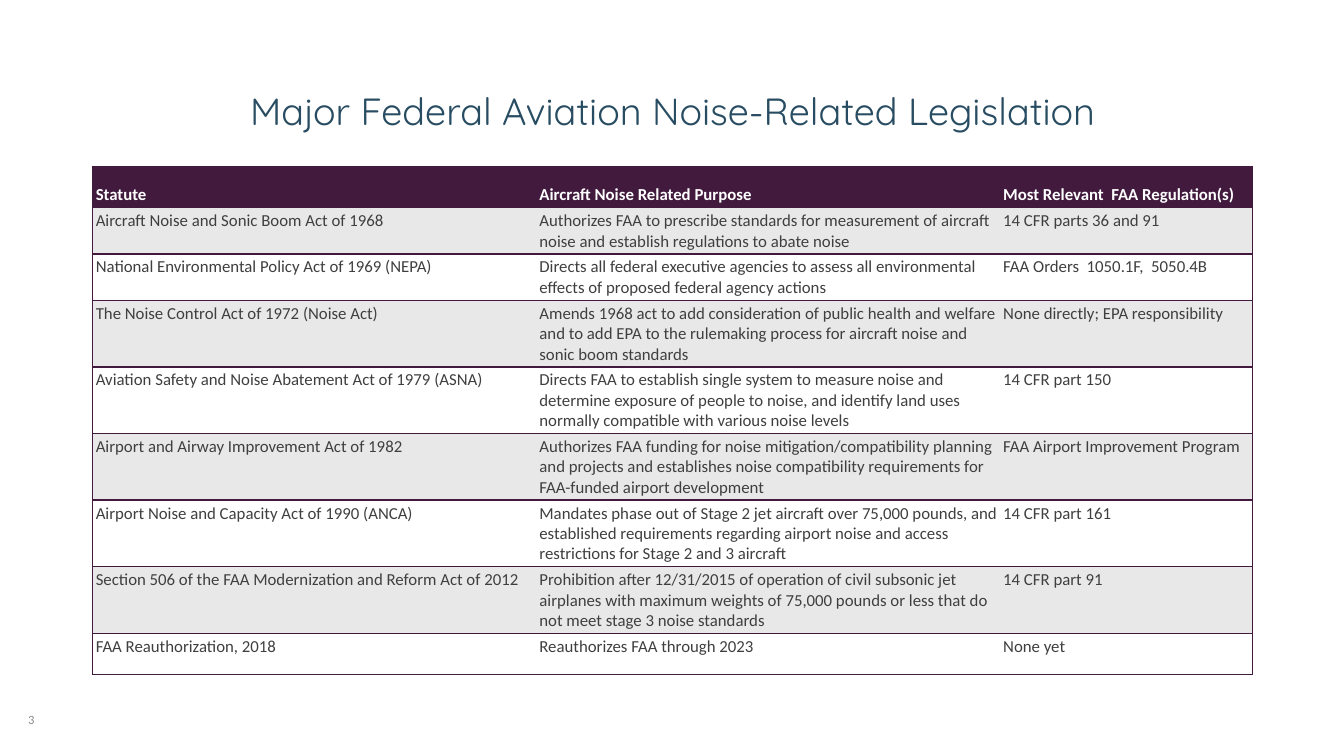
import pptx
import pptx.util
import pptx.dml.color
import pptx.enum.text
from lxml import etree
from pptx.util import Inches

TITLE = "Major Federal Aviation Noise-Related Legislation"
PAGE_NUMBER = "3"
HEADER = ("Statute", "Aircraft Noise Related Purpose", "Most Relevant  FAA Regulation(s)")
STATUTES = [
    ("Aircraft Noise and Sonic Boom Act of 1968",
     "Authorizes FAA to prescribe standards for measurement of aircraft noise and establish "
     "regulations to abate noise",
     "14 CFR parts 36 and 91"),
    ("National Environmental Policy Act of 1969 (NEPA)",
     "Directs all federal executive agencies to assess all environmental effects of proposed "
     "federal agency actions",
     "FAA Orders  1050.1F,  5050.4B"),
    ("The Noise Control Act of 1972 (Noise Act)",
     "Amends 1968 act to add consideration of public health and welfare and to add EPA to the "
     "rulemaking process for aircraft noise and sonic boom standards",
     "None directly; EPA responsibility"),
    ("Aviation Safety and Noise Abatement Act of 1979 (ASNA)",
     "Directs FAA to establish single system to measure noise and determine exposure of people "
     "to noise, and identify land uses normally compatible with various noise levels",
     "14 CFR part 150"),
    ("Airport and Airway Improvement Act of 1982",
     "Authorizes FAA funding for noise mitigation/compatibility planning and projects and "
     "establishes noise compatibility requirements for FAA-funded airport development",
     "FAA Airport Improvement Program"),
    ("Airport Noise and Capacity Act of 1990 (ANCA)",
     "Mandates phase out of Stage 2 jet aircraft over 75,000 pounds, and established "
     "requirements regarding airport noise and access restrictions for Stage 2 and 3 aircraft",
     "14 CFR part 161"),
    ("Section 506 of the FAA Modernization and Reform Act of 2012",
     "Prohibition after 12/31/2015 of operation of civil subsonic jet airplanes with maximum "
     "weights of 75,000 pounds or less that do not meet stage 3 noise standards",
     "14 CFR part 91"),
    ("FAA Reauthorization, 2018", "Reauthorizes FAA through 2023", "None yet"),
]
COLORS = {"title": "284C61", "number": "8C8C8C", "plum": "411A3E", "header": "FFFFFF",
          "body": "3F3F3F", "band": "E9E8E8", "plain": "FFFFFF"}
COLUMN_WIDTHS = (4.4, 4.6, 2.5)
ROW_HEIGHT = 0.41
LEFT, TABLE_TOP = 0.92, 1.65
ANCHOR = pptx.enum.text.MSO_ANCHOR


def rgb(name):
    return pptx.dml.color.RGBColor.from_string(COLORS[name])


def write(frame, text, size, color, font="Calibri", bold=False, align=None, spacing=None):
    frame.word_wrap = True
    para = frame.paragraphs[0]
    para.alignment = align
    para.line_spacing = spacing
    span = para.add_run()
    span.text = text
    span.font.name = font
    span.font.size = pptx.util.Pt(size)
    span.font.bold = bold
    span.font.color.rgb = rgb(color)


def set_borders(cell, sides):
    """Draw the named sides (L, R, T, B) in plum and clear the others."""
    namespace = pptx.oxml.ns.nsdecls("a")
    plum = f'<a:solidFill><a:srgbClr val="{COLORS["plum"]}"/></a:solidFill>'
    properties = cell._tc.get_or_add_tcPr()
    for position, side in enumerate("LRTB"):
        paint = plum if side in sides else "<a:noFill/>"
        properties.insert(position, etree.fromstring(
            f'<a:ln{side} {namespace} w="12700">{paint}</a:ln{side}>'))


def fill_cell(cell, text, row, column):
    is_header = row == 0
    cell.margin_left = cell.margin_top = cell.margin_bottom = Inches(0.03)
    cell.margin_right = 0
    cell.vertical_anchor = ANCHOR.BOTTOM if is_header else ANCHOR.TOP
    cell.fill.solid()
    cell.fill.fore_color.rgb = rgb("plum" if is_header else "band" if row % 2 else "plain")
    write(cell.text_frame, text, 12, "header" if is_header else "body", bold=is_header)
    set_borders(cell, "TB" + {0: "L", len(COLUMN_WIDTHS) - 1: "R"}.get(column, ""))


def add_statute_table(page):
    rows = [HEADER, *STATUTES]
    table = page.shapes.add_table(
        len(rows), len(HEADER), Inches(LEFT), Inches(TABLE_TOP),
        Inches(sum(COLUMN_WIDTHS)), Inches(ROW_HEIGHT * len(rows))).table
    for column, width in zip(table.columns, COLUMN_WIDTHS):
        column.width = Inches(width)
    for row, texts in enumerate(rows):
        table.rows[row].height = Inches(ROW_HEIGHT)
        for column, text in enumerate(texts):
            fill_cell(table.cell(row, column), text, row, column)


def main():
    deck = pptx.Presentation()
    deck.slide_width, deck.slide_height = Inches(13.33), Inches(7.5)
    page = deck.slides.add_slide(deck.slide_layouts[5])

    title = page.shapes.title
    title.left, title.top = Inches(LEFT), Inches(0.4)
    title.width, title.height = Inches(11.5), Inches(1.45)
    title.text_frame.vertical_anchor = ANCHOR.MIDDLE
    title.text_frame.auto_size = pptx.enum.text.MSO_AUTO_SIZE.NONE
    write(title.text_frame, TITLE, 27, "title", font="Quicksand",
          align=pptx.enum.text.PP_ALIGN.CENTER, spacing=0.9)

    number = page.shapes.add_textbox(Inches(0.18), Inches(6.94), Inches(0.41), Inches(0.4))
    number.text_frame.vertical_anchor = ANCHOR.MIDDLE
    write(number.text_frame, PAGE_NUMBER, 9, "number")

    add_statute_table(page)
    deck.save("out.pptx")


if __name__ == "__main__":
    main()
